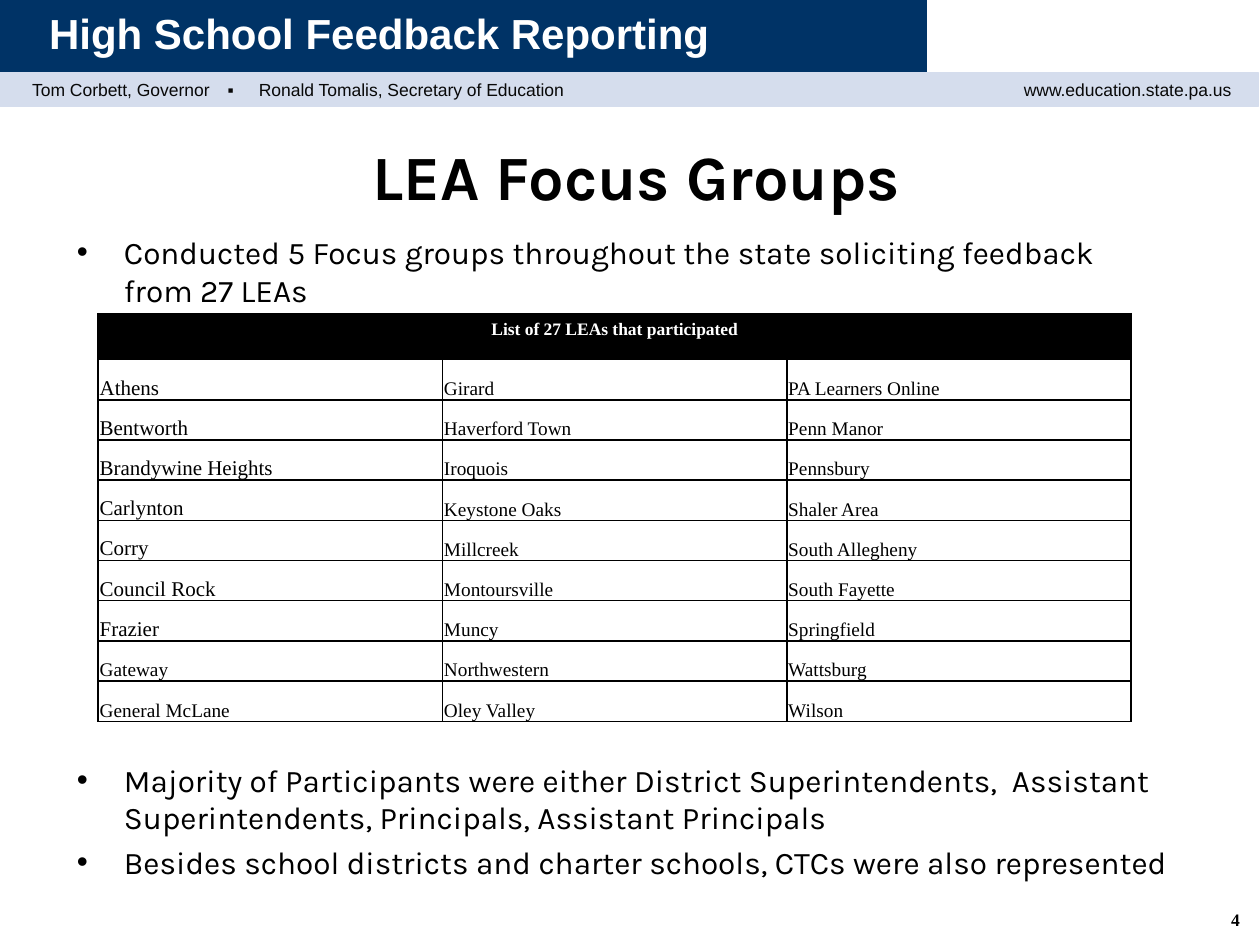
"""Build the slide on the LEA focus groups."""
import lxml.etree
import pptx
import pptx.dml.color
import pptx.enum.shapes
import pptx.enum.text
import pptx.oxml.ns
import pptx.util

Cm = pptx.util.Cm
Pt = pptx.util.Pt
ALIGN = pptx.enum.text.PP_ALIGN
ANCHOR = pptx.enum.text.MSO_ANCHOR
qn = pptx.oxml.ns.qn

SMALL = {"name": "Arial", "size": Pt(10)}
BANNER = {"name": "Arial", "size": Pt(24), "bold": True}
TITLE = {"name": "Karla", "size": Pt(36), "bold": True}
BODY = {"name": "Karla", "size": Pt(18)}
HEAD = {"name": "Times New Roman", "size": Pt(10), "bold": True}
CELL = {"name": "Times New Roman", "size": Pt(11), "bold": False}
LARGE = CELL | {"size": Pt(12)}
INSETS = {"margin_left": Cm(0.03), "margin_right": Cm(0.03),
          "margin_top": Cm(0.03), "margin_bottom": 0,
          "vertical_anchor": ANCHOR.BOTTOM}

GROUPS = (
    ("Athens", "Girard", "PA Learners Online"),
    ("Bentworth", "Haverford Town", "Penn Manor"),
    ("Brandywine Heights", "Iroquois", "Pennsbury"),
    ("Carlynton", "Keystone Oaks", "Shaler Area"),
    ("Corry", "Millcreek", "South Allegheny"),
    ("Council Rock", "Montoursville", "South Fayette"),
    ("Frazier", "Muncy", "Springfield"),
    ("Gateway", "Northwestern", "Wattsburg"),
    ("General McLane", "Oley Valley", "Wilson"),
)
LARGE_ROWS = 7


def shade(code):
    """Turn a hex string into a colour."""
    return pptx.dml.color.RGBColor.from_string(code)


def put(target, values):
    """Set each attribute named in a dict."""
    for name, value in values.items():
        setattr(target, name, value)


def paint(fill, code):
    """Make a fill solid."""
    fill.solid()
    fill.fore_color.rgb = shade(code)


def write(para, text, style, ink="000000", align=ALIGN.LEFT):
    """Write one formatted run into a paragraph."""
    para.alignment = align
    run = para.add_run()
    run.text = text
    put(run.font, style)
    run.font.color.rgb = shade(ink)


def add_bar(slide, place, code):
    """Add a plain coloured bar."""
    kind = pptx.enum.shapes.MSO_SHAPE.RECTANGLE
    bar = slide.shapes.add_shape(kind, *map(Cm, place))
    bar.shadow.inherit = False
    paint(bar.fill, code)
    paint(bar.line.fill, code)
    bar.line.width = Pt(0.75)


def add_box(slide, place, wrap=True, anchor=ANCHOR.MIDDLE):
    """Add a text box and return its frame."""
    frame = slide.shapes.add_textbox(*map(Cm, place)).text_frame
    put(frame, {"word_wrap": wrap, "vertical_anchor": anchor})
    return frame


def add_tabs(para, stops):
    """Give a paragraph left tab stops."""
    tabs = lxml.etree.SubElement(para._p.get_or_add_pPr(), qn("a:tabLst"))
    for stop in stops:
        lxml.etree.SubElement(tabs, qn("a:tab"), pos=str(Cm(stop)), algn="l")


def add_list(slide, place, items):
    """Add a bulleted list."""
    frame = add_box(slide, place, anchor=ANCHOR.TOP)
    for index, item in enumerate(items):
        para = frame.add_paragraph() if index else frame.paragraphs[0]
        props = para._p.get_or_add_pPr()
        props.set("marL", str(Cm(0.95)))
        props.set("indent", str(-Cm(0.95)))
        lxml.etree.SubElement(props, qn("a:buFont"), typeface="Arial")
        lxml.etree.SubElement(props, qn("a:buChar"), char="•")
        if index:
            para.space_before = Pt(3.6)
        write(para, item, BODY)


def frame_cell(cell, code):
    """Draw black borders round a cell and fill it."""
    props = cell._tc.get_or_add_tcPr()
    for side in ("lnL", "lnR", "lnT", "lnB"):
        line = lxml.etree.SubElement(props, qn("a:" + side), w=str(Pt(1)))
        solid = lxml.etree.SubElement(line, qn("a:solidFill"))
        lxml.etree.SubElement(solid, qn("a:srgbClr"), val="000000")
    paint(cell.fill, code)


def add_grid(slide):
    """Add the table of participants."""
    count = len(GROUPS) + 1
    place = map(Cm, (1.98, 6.32, 20.8, 8.33))
    table = slide.shapes.add_table(count, 3, *place).table
    for col in table.columns:
        col.width = Cm(6.94)
    for index, row in enumerate(table.rows):
        row.height = Cm(0.81 if index else 0.93)
        for cell in row.cells:
            frame_cell(cell, "FFFFFF" if index else "000000")
    head = table.cell(0, 0)
    head.merge(table.cell(0, 2))
    write(head.text_frame.paragraphs[0], "List of 27 LEAs that participated",
          HEAD, "FFFFFF", ALIGN.CENTER)
    for r, names in enumerate(GROUPS, 1):
        for c, name in enumerate(names):
            cell = table.cell(r, c)
            put(cell, INSETS)
            style = LARGE if c == 0 and r <= LARGE_ROWS else CELL
            write(cell.text_frame.paragraphs[0], name, style)


def add_header(slide):
    """Add the banner and the strip below it."""
    add_bar(slide, (0, 0, 18.67, 1.47), "003366")
    add_bar(slide, (0, 1.47, 25.37, 0.67), "D5DDED")
    para = add_box(slide, (0.4, 1.47, 16.08, 0.69)).paragraphs[0]
    add_tabs(para, (3.94, 4.57))
    write(para, "Tom Corbett, Governor\t▪\tRonald Tomalis, Secretary of Education",
          SMALL, "080808")
    para = add_box(slide, (19.58, 1.47, 5.49, 0.69)).paragraphs[0]
    write(para, "www.education.state.pa.us", SMALL, "080808", ALIGN.RIGHT)
    para = add_box(slide, (0.74, 0, 13.94, 1.3), wrap=False).paragraphs[0]
    write(para, "High School Feedback Reporting", BANNER, "FFFFFF")


def add_title(slide, text):
    """Place and format the slide title."""
    title = slide.shapes.title
    put(title, {"left": Cm(1.4), "top": Cm(2.62),
                "width": Cm(22.86), "height": Cm(1.83)})
    title.text_frame.vertical_anchor = ANCHOR.MIDDLE
    write(title.text_frame.paragraphs[0], text, TITLE, align=ALIGN.CENTER)


def main():
    """Build and save the slide."""
    deck = pptx.Presentation()
    put(deck, {"slide_width": Cm(25.4), "slide_height": Cm(19.05)})
    slide = deck.slides.add_slide(deck.slide_layouts[5])
    add_header(slide)
    add_title(slide, "LEA Focus Groups")
    add_list(slide, (1.3, 4.57, 22.5, 1.7), (
        "Conducted 5 Focus groups throughout the state soliciting feedback from 27 LEAs",
    ))
    add_grid(slide)
    add_list(slide, (1.3, 15.21, 22.5, 2.9), (
        "Majority of Participants were either District Superintendents,  Assistant "
        "Superintendents, Principals, Assistant Principals",
        "Besides school districts and charter schools, CTCs were also represented",
    ))
    para = add_box(slide, (24.56, 18.21, 0.69, 0.66), wrap=False).paragraphs[0]
    write(para, "4", HEAD, align=ALIGN.CENTER)
    deck.save("out.pptx")


if __name__ == "__main__":
    main()
